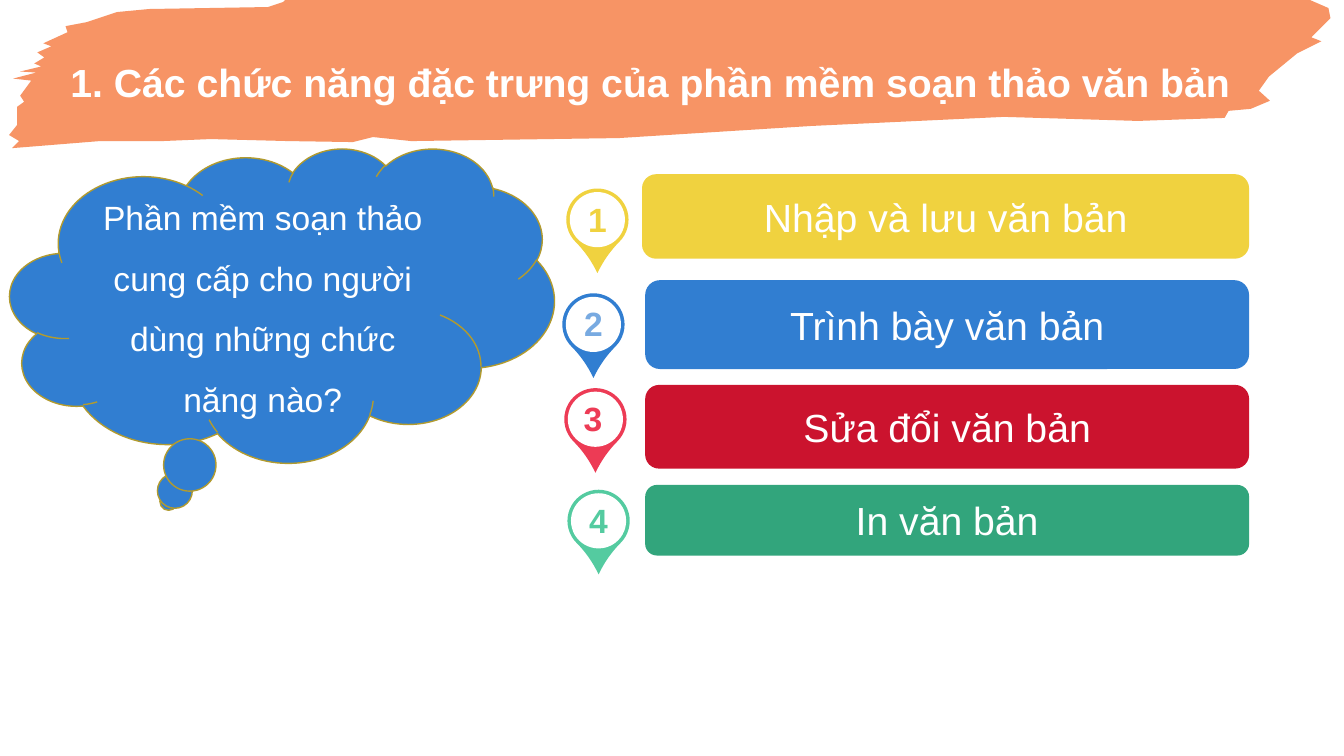
"""Build the slide on the typical functions of word processing software."""
from dataclasses import dataclass

from pptx import Presentation
from pptx.dml.color import RGBColor
from pptx.enum.shapes import MSO_SHAPE
from pptx.enum.text import MSO_ANCHOR, MSO_AUTO_SIZE, PP_ALIGN
from pptx.shapes.autoshape import Shape
from pptx.shapes.shapetree import SlideShapes
from pptx.util import Cm, Pt

CLOUD = MSO_SHAPE.CLOUD_CALLOUT
TEARDROP = MSO_SHAPE.TEAR
ELLIPSE = MSO_SHAPE.OVAL
ROUNDED = MSO_SHAPE.ROUNDED_RECTANGLE
TOP, MIDDLE = MSO_ANCHOR.TOP, MSO_ANCHOR.MIDDLE
FIT_SHAPE, FIXED = MSO_AUTO_SIZE.SHAPE_TO_FIT_TEXT, MSO_AUTO_SIZE.NONE
CENTER = PP_ALIGN.CENTER

WHITE, ORANGE, BLUE, OLIVE = "FFFFFF", "F79465", "317ED1", "B29B2F"
PIN_SIZE, RING, LABEL_DROP, LABEL_HEIGHT = 1.57, 0.09, 0.13, 1.27
HOLE_SIZE = PIN_SIZE - 2 * RING
BAR_RIGHT = 31.48
BRUSH_UNIT = Cm(0.0254)
BRUSH_EDGE = [
    (1215, 117), (1219, 110), (1241, 108), (1260, 100), (1249, 90), (1259, 76),
    (1287, 53), (1311, 41), (1301, 37), (1320, 18), (1318, 8), (1295, -2),
    (1184, -25), (516, -76), (357, -74), (281, 2), (266, 7), (148, 9),
    (116, 12), (86, 22), (65, 26), (67, 32), (43, 43), (51, 46),
    (37, 52), (44, 57), (34, 63), (41, 66), (20, 71), (36, 72),
    (13, 78), (31, 80), (20, 95), (24, 101), (17, 106), (17, 124),
    (9, 134), (19, 140), (12, 147), (99, 140), (161, 140), (209, 138),
    (286, 140), (350, 141), (370, 136), (408, 140), (614, 137), (805, 125),
    (996, 116), (1129, 120),
]


@dataclass(frozen=True)
class Box:
    """Place and size in centimetres."""
    left: float
    top: float
    width: float
    height: float


@dataclass(frozen=True)
class Function:
    """One numbered function with its pin and its bar."""
    name: str
    pin_left: float
    pin_top: float
    pin_color: str
    number_color: str
    bar_top: float
    bar_height: float
    bar_color: str
    bar_left: float = 16.26
    label_shift: float = RING


FUNCTIONS = [
    Function("Nhập và lưu văn bản", 14.27, 4.75, "F0D23F", "F0D23F",
             4.39, 2.13, "F0D23F", bar_left=16.18),
    Function("Trình bày văn bản", 14.17, 7.39, BLUE, "78AAE1", 7.06, 2.24, BLUE),
    Function("Sửa đổi văn bản", 14.22, 9.78, "ED3B55", "ED3B55",
             9.7, 2.11, "CB132E", label_shift=0.03),
    Function("In văn bản", 14.3, 12.34, "54CBA0", "54CBA0", 12.22, 1.78, "32A57C"),
]


def rgb(code: str) -> RGBColor:
    """Turn a hex string into a colour."""
    return RGBColor.from_string(code)


def paint(shape: Shape, fill: str, line: str | None = None) -> None:
    """Fill a shape, outline it if asked and drop its shadow."""
    shape.shadow.inherit = False
    shape.fill.solid()
    shape.fill.fore_color.rgb = rgb(fill)
    if line:
        shape.line.color.rgb = rgb(line)
        shape.line.width = Pt(1)
    else:
        shape.line.fill.background()


def write(shape: Shape, text: str, size: int, color: str = WHITE, bold: bool = False,
          spacing: float = 1.0, anchor: MSO_ANCHOR = MIDDLE,
          fit: MSO_AUTO_SIZE = FIXED) -> None:
    """Write one centred paragraph into a shape."""
    frame = shape.text_frame
    paragraph = frame.paragraphs[0]
    run = paragraph.add_run()
    run.text = text
    run.font.color.rgb = rgb(color)
    formats = {
        frame: {"word_wrap": True, "vertical_anchor": anchor, "auto_size": fit},
        paragraph: {"alignment": CENTER, "line_spacing": spacing},
        run.font: {"name": "Arial", "size": Pt(size), "bold": bold},
    }
    for target, values in formats.items():
        for attribute, value in values.items():
            setattr(target, attribute, value)


def add_preset(shapes: SlideShapes, kind: MSO_SHAPE, box: Box, fill: str,
               line: str | None = None) -> Shape:
    """Add a painted preset shape."""
    shape = shapes.add_shape(kind, Cm(box.left), Cm(box.top), Cm(box.width), Cm(box.height))
    paint(shape, fill, line)
    return shape


def add_label(shapes: SlideShapes, box: Box, text: str, size: int, color: str,
              spacing: float = 1.0) -> None:
    """Add a bold text box."""
    label = shapes.add_textbox(Cm(box.left), Cm(box.top), Cm(box.width), Cm(box.height))
    write(label, text, size, color, True, spacing, TOP, FIT_SHAPE)


def add_brush(shapes: SlideShapes) -> None:
    """Draw the brush stroke behind the title."""
    start, *rest = BRUSH_EDGE
    builder = shapes.build_freeform(*start, scale=BRUSH_UNIT)
    builder.add_line_segments(rest, close=True)
    paint(builder.convert_to_shape(), ORANGE)


def add_pin(shapes: SlideShapes, item: Function, number: int) -> None:
    """Draw the numbered pin of a function."""
    left, top = item.pin_left, item.pin_top
    group = shapes.add_group_shape().shapes
    drop = add_preset(group, TEARDROP, Box(left, top, PIN_SIZE, PIN_SIZE), item.pin_color)
    drop.rotation = 135
    drop.adjustments[0] = 1.214
    add_preset(group, ELLIPSE, Box(left + RING, top + RING, HOLE_SIZE, HOLE_SIZE), WHITE)
    label = Box(left + item.label_shift, top + LABEL_DROP, HOLE_SIZE, LABEL_HEIGHT)
    add_label(group, label, str(number), 24, item.number_color)


def add_bar(shapes: SlideShapes, item: Function) -> None:
    """Draw the bar that names a function."""
    box = Box(item.bar_left, item.bar_top, BAR_RIGHT - item.bar_left, item.bar_height)
    write(add_preset(shapes, ROUNDED, box, item.bar_color), item.name, 28)


def main() -> None:
    """Build and save the slide."""
    deck = Presentation()
    deck.slide_width, deck.slide_height = Cm(33.87), Cm(19.05)
    shapes = deck.slides.add_slide(deck.slide_layouts[6]).shapes
    add_brush(shapes)
    add_label(shapes, Box(1.27, 0.76, 30.23, 1.83),
              "1. Các chức năng đặc trưng của phần mềm soạn thảo văn bản", 28, WHITE, 1.5)
    question = add_preset(shapes, CLOUD, Box(0.25, 3.73, 13.72, 7.92), BLUE, OLIVE)
    write(question, "Phần mềm soạn thảo cung cấp cho người dùng những chức năng nào?",
          24, spacing=1.5)
    for number, item in enumerate(FUNCTIONS, start=1):
        add_pin(shapes, item, number)
        add_bar(shapes, item)
    deck.save("out.pptx")


if __name__ == "__main__":
    main()
